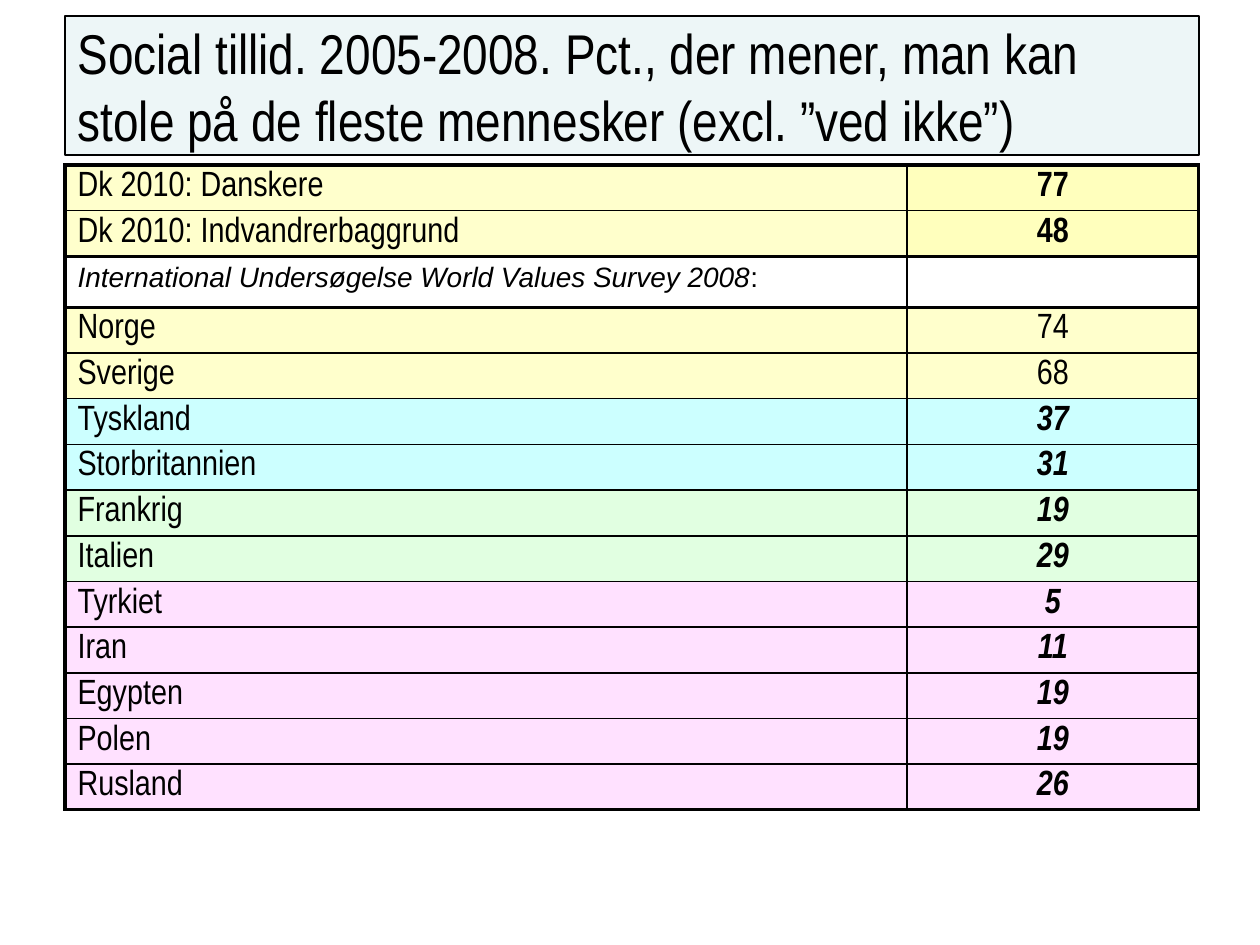
from dataclasses import dataclass

from lxml import etree
from pptx import Presentation, util as u
from pptx.dml.color import RGBColor
from pptx.enum import text as t
from pptx.oxml import ns

PX = 914400 // 126  # one px in EMU


def px(n: int) -> u.Emu:
    return u.Emu(n * PX)


@dataclass(frozen=True)
class Theme:
    font: str = "Arial Narrow"
    note: str = "Arial"
    ink: str = "000000"
    band: str = "EDF6F7"
    cream: str = "FFFFCC"
    gold: str = "FFFFBD"
    aqua: str = "CCFFFF"
    mint: str = "E1FFE1"
    pink: str = "FFE1FF"
    head: int = 32
    body: int = 20
    small: int = 16


@dataclass(frozen=True)
class Row:
    name: str
    value: str
    fill: str
    bold: bool = True
    ital: bool = True
    tint: str = ""  # value cell, when it differs


T = Theme()
LEFT, WIDE = 65, 1134
COLS = (842, 292)
TOP, NOTE_H, ROWS_H = 165, 51, 594  # ROWS_H is shared by the data rows
PAD, HANG = 6, 48
NOTE = 2  # index of the survey row
THICK, THIN = 2, 1

ROWS = [
    Row("Dk 2010: Danskere", "77", T.cream, ital=False, tint=T.gold),
    Row("Dk 2010: Indvandrerbaggrund", "48", T.cream, ital=False, tint=T.gold),
    Row("International Undersøgelse World Values Survey 2008", "", ""),
    Row("Norge", "74", T.cream, bold=False, ital=False),
    Row("Sverige", "68", T.cream, bold=False, ital=False),
    Row("Tyskland", "37", T.aqua),
    Row("Storbritannien", "31", T.aqua),
    Row("Frankrig", "19", T.mint),
    Row("Italien", "29", T.mint),
    Row("Tyrkiet", "5", T.pink),
    Row("Iran", "11", T.pink),
    Row("Egypten", "19", T.pink),
    Row("Polen", "19", T.pink),
    Row("Rusland", "26", T.pink),
]


def write(para, text: str, *, size: int = T.body, font: str = T.font,
          bold: bool = False, ital: bool = False,
          align=t.PP_ALIGN.LEFT) -> None:
    """Add one formatted run to a paragraph."""
    para.alignment = align
    run = para.add_run()
    run.text = text
    f = run.font
    f.size, f.name, f.bold, f.italic = u.Pt(size), font, bold, ital
    f.color.rgb = RGBColor.from_string(T.ink)


def edge(cell, **sides: int) -> None:
    """Draw cell borders; widths in points by side: L, R, T, B."""
    props = cell._tc.get_or_add_tcPr()
    for i, (side, width) in enumerate(sides.items()):
        line = etree.Element(ns.qn(f"a:ln{side}"), w=str(u.Pt(width)))
        fill = etree.SubElement(line, ns.qn("a:solidFill"))
        etree.SubElement(fill, ns.qn("a:srgbClr"), val=T.ink)
        props.insert(i, line)


def paint(cell, color: str) -> None:
    if color:
        cell.fill.solid()
        cell.fill.fore_color.rgb = RGBColor.from_string(color)
    else:
        cell.fill.background()


def hang(para) -> None:
    props = para._p.get_or_add_pPr()
    props.set("marL", str(px(HANG)))
    props.set("indent", str(-px(HANG)))


def add_title(slide) -> None:
    box = slide.shapes.title
    box.left, box.top, box.width, box.height = map(px, (LEFT, 16, WIDE, 139))
    box.fill.solid()
    box.fill.fore_color.rgb = RGBColor.from_string(T.band)
    box.line.color.rgb = RGBColor.from_string(T.ink)
    box.line.width = u.Pt(0.75)
    frame = box.text_frame
    frame.word_wrap = True
    frame.auto_size = t.MSO_AUTO_SIZE.NONE
    frame.vertical_anchor = t.MSO_ANCHOR.MIDDLE
    write(frame.paragraphs[0],
          "Social tillid. 2005-2008. Pct., der mener, man kan stole "
          "på de fleste mennesker (excl. ”ved ikke”)", size=T.head)


def add_grid(slide) -> None:
    table = slide.shapes.add_table(
        len(ROWS), len(COLS), px(LEFT), px(TOP), px(WIDE),
        px(ROWS_H + NOTE_H)).table
    table.first_row = table.horz_banding = False
    for col, width in zip(table.columns, COLS):
        col.width = px(width)

    heavy = {0, NOTE, NOTE + 1, len(ROWS)}  # thick horizontal rules
    for i, row in enumerate(ROWS):
        note = i == NOTE
        table.rows[i].height = (px(NOTE_H) if note
                                else u.Emu(px(ROWS_H) // (len(ROWS) - 1)))
        name, value = table.cell(i, 0), table.cell(i, 1)
        above, below = (THICK if k in heavy else THIN for k in (i, i + 1))
        edge(name, L=THICK, R=THIN, T=above, B=below)
        edge(value, L=THIN, R=THICK, T=above, B=below)
        paint(name, row.fill)
        paint(value, row.tint or row.fill)
        for cell in (name, value):
            cell.margin_top = cell.margin_bottom = px(PAD)
            hang(cell.text_frame.paragraphs[0])

        label = name.text_frame.paragraphs[0]
        if note:
            write(label, row.name, size=T.small, font=T.note, ital=True)
            write(label, ":", size=T.small, font=T.note)
        else:
            write(label, row.name)
            write(value.text_frame.paragraphs[0], row.value, bold=row.bold,
                  ital=row.ital, align=t.PP_ALIGN.CENTER)


def main() -> None:
    deck = Presentation()
    deck.slide_width, deck.slide_height = u.Inches(10), u.Inches(7.5)
    slide = deck.slides.add_slide(deck.slide_layouts[5])  # title only
    add_title(slide)
    add_grid(slide)
    deck.save("out.pptx")


if __name__ == "__main__":
    main()
